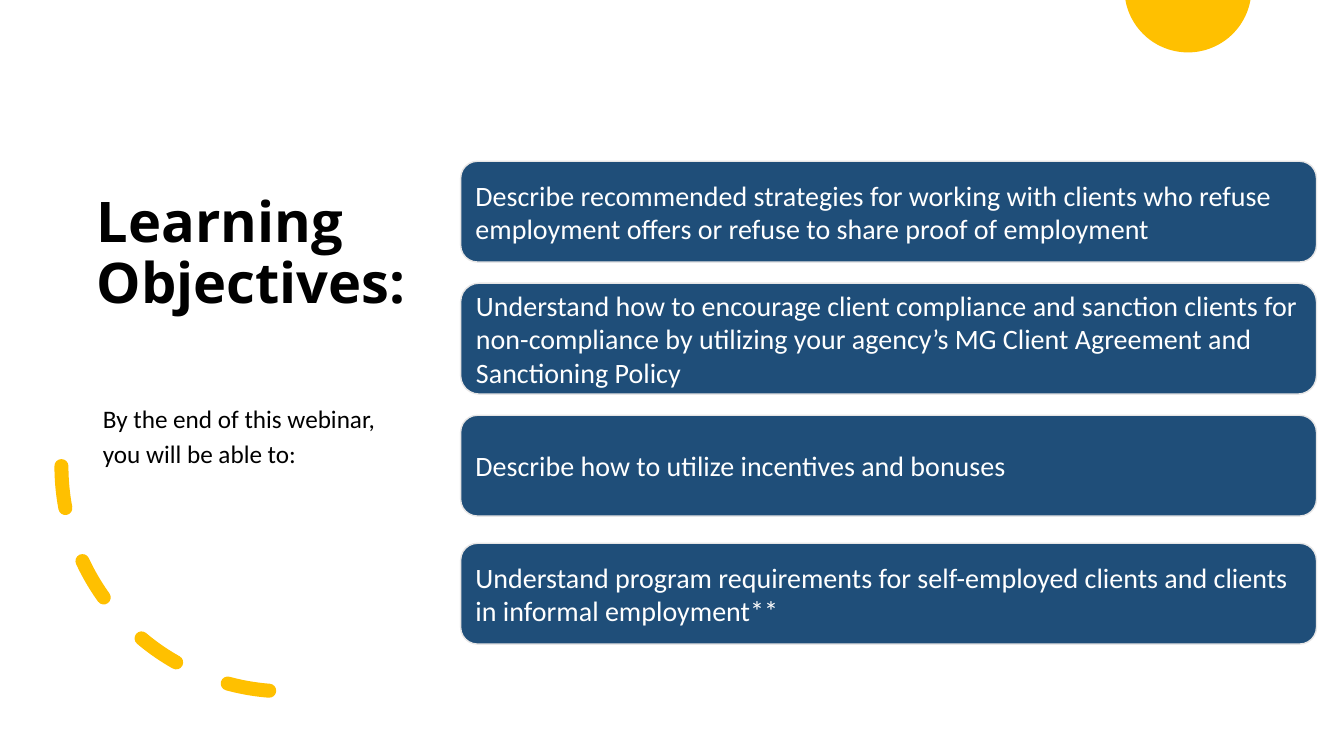
from math import asin, cos, pi, sin

from pptx import Presentation
from pptx.dml.color import RGBColor
from pptx.enum.dml import MSO_LINE
from pptx.enum.shapes import MSO_SHAPE
from pptx.enum.text import MSO_ANCHOR, MSO_AUTO_SIZE, PP_ALIGN
from pptx.oxml.ns import qn
from pptx.util import Inches, Pt

ARC, CARD = MSO_SHAPE.ARC, MSO_SHAPE.ROUNDED_RECTANGLE
DASH = MSO_LINE.DASH
TOP, MIDDLE = MSO_ANCHOR.TOP, MSO_ANCHOR.MIDDLE
LEFT = PP_ALIGN.LEFT
NO_AUTOFIT = MSO_AUTO_SIZE.NONE

CELL = Inches(0.1)
COLUMNS, ROWS = 133.33, 75
YELLOW, NAVY, PALE, WHITE, BLACK = "FFC000", "1F4E79", "E7E6E6", "FFFFFF", "000000"

HEADING_FONT = {"name": "Open Sans", "size": Pt(40), "bold": True}
INTRO_FONT = {"name": "Calibri", "size": Pt(18), "bold": False}
CARD_FONT = {"name": "Calibri", "size": Pt(20), "bold": False}
HEADING_SPACING = {"alignment": LEFT, "line_spacing": 0.9, "space_before": Pt(0), "space_after": Pt(0)}
INTRO_SPACING = {**HEADING_SPACING, "space_after": Pt(6)}
CARD_SPACING = {"alignment": LEFT, "space_after": Pt(6)}
FLUSH_FRAME = {"word_wrap": True, "auto_size": NO_AUTOFIT, "vertical_anchor": TOP,
               "margin_top": 0, "margin_bottom": 0}
CARD_FRAME = {"word_wrap": True, "vertical_anchor": MIDDLE}

CARD_LEFT, CARD_WIDTH = 45.7, 84.9
OBJECTIVES = [
    (16, 10, "Describe recommended strategies for working with clients who refuse "
             "employment offers or refuse to share proof of employment"),
    (28.1, 11, "Understand how to encourage client compliance and sanction clients for "
               "non-compliance by utilizing your agency’s MG Client Agreement and Sanctioning Policy"),
    (41.2, 10, "Describe how to utilize incentives and bonuses"),
    (53.9, 10, "Understand program requirements for self-employed clients and clients "
               "in informal employment**"),
]


def cells(*counts):
    return [round(count * CELL) for count in counts]


def color(hex_value):
    return RGBColor.from_string(hex_value)


def apply(target, values):
    for name, value in values.items():
        setattr(target, name, value)


def paint(shape, fill, line=None, width=1):
    shape.shadow.inherit = False
    for part, hex_value in ((shape.fill, fill), (shape.line.fill, line)):
        if hex_value:
            part.solid()
            part.fore_color.rgb = color(hex_value)
        else:
            part.background()
    if line:
        shape.line.width = Pt(width)


def write(shape, lines, frame_format, spacing, font, hex_value):
    frame = shape.text_frame
    apply(frame, frame_format)
    frame.text = "\n".join(lines)
    for paragraph in frame.paragraphs:
        apply(paragraph, spacing)
        for run in paragraph.runs:
            apply(run.font, font)
            run.font.color.rgb = color(hex_value)


def place(shape, *box):
    apply(shape, dict(zip(("left", "top", "width", "height"), cells(*box))))


def remove_bullets(shape):
    for paragraph in shape.text_frame.paragraphs:
        properties = paragraph._p.get_or_add_pPr()
        properties.set("marL", "0")
        properties.set("indent", "0")
        properties.append(properties.makeelement(qn("a:buNone"), {}))


def add_cut_circle(slide, center_x, center_y, radius, steps=60):
    start = asin(-center_y / radius)
    angles = [start + (pi - 2 * start) * step / steps for step in range(steps + 1)]
    points = [cells(center_x + radius * cos(angle), center_y + radius * sin(angle))
              for angle in angles]
    builder = slide.shapes.build_freeform(*points[0])
    builder.add_line_segments(points[1:], close=True)
    paint(builder.convert_to_shape(), YELLOW)


def add_dashed_arc(slide, left, top, diameter):
    arc = slide.shapes.add_shape(ARC, *cells(left, top, diameter, diameter))
    paint(arc, None, YELLOW, 10)
    arc.line.dash_style = DASH
    arc.rotation = 90
    properties = arc.element.spPr
    properties.find(qn("a:xfrm")).set("flipV", "1")
    properties.find(qn("a:ln")).set("cap", "rnd")


def add_card(slide, top, height, text):
    card = slide.shapes.add_shape(CARD, *cells(CARD_LEFT, top, CARD_WIDTH, height))
    paint(card, NAVY, PALE)
    write(card, [text], CARD_FRAME, CARD_SPACING, CARD_FONT, WHITE)


def main():
    presentation = Presentation()
    presentation.slide_width, presentation.slide_height = cells(COLUMNS, ROWS)
    slide = presentation.slides.add_slide(presentation.slide_layouts[1])

    add_cut_circle(slide, 117.85, -1.1, 6.3)

    heading, intro = slide.placeholders
    place(heading, 8.6, 19.3, 36, 13.8)
    write(heading, ["Learning", "Objectives:"], FLUSH_FRAME, HEADING_SPACING, HEADING_FONT, BLACK)
    place(intro, 9.2, 40.3, 35, 7.5)
    write(intro, ["By the end of this webinar,", "you will be able to:"],
          FLUSH_FRAME, INTRO_SPACING, INTRO_FONT, BLACK)
    remove_bullets(intro)

    add_dashed_arc(slide, 6.1, 23.9, 44.7)
    for top, height, text in OBJECTIVES:
        add_card(slide, top, height, text)

    presentation.save("out.pptx")


if __name__ == "__main__":
    main()
